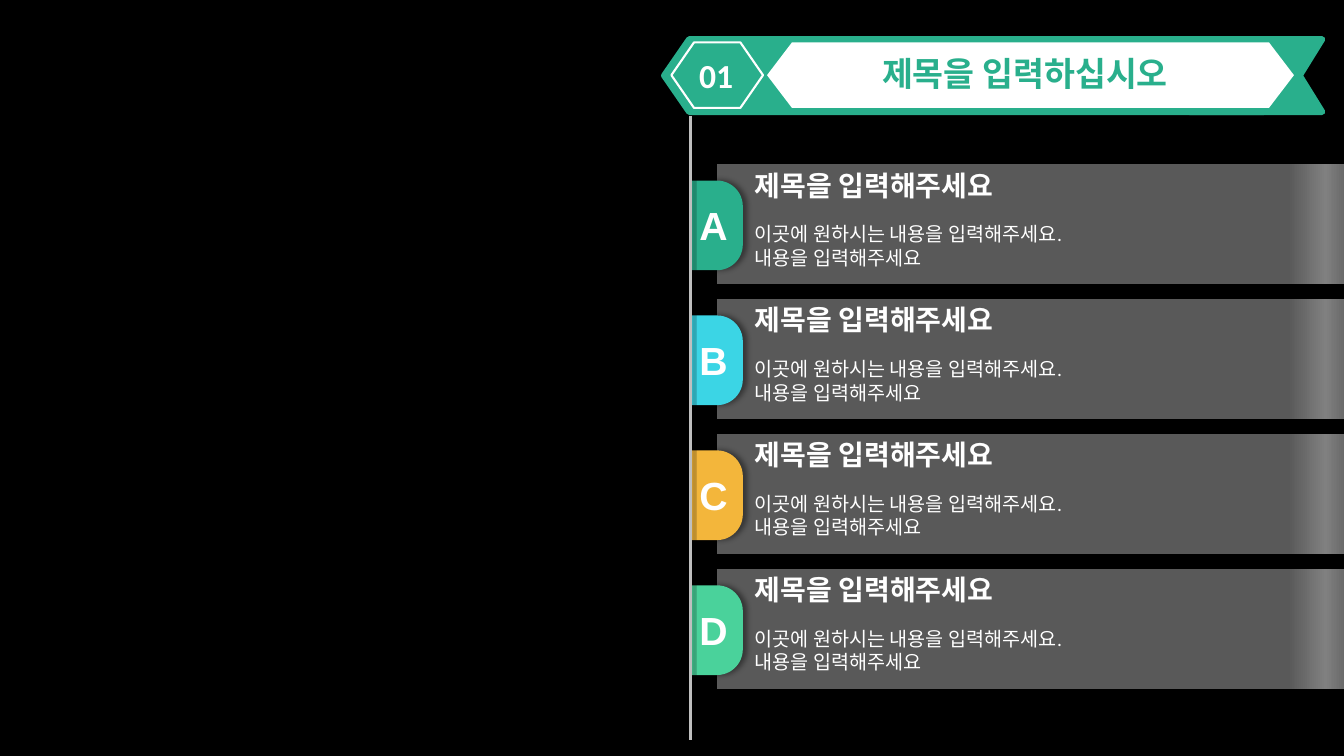
import pptx
import pptx.dml.color
import pptx.enum.shapes
import pptx.enum.text
import pptx.oxml
import pptx.oxml.ns
import pptx.util
from pptx.util import Cm

NUMBER = "01"
TITLE = "제목을 입력하십시오"
HEADING = "제목을 입력해주세요"
BODY = ["이곳에 원하시는 내용을 입력해주세요.", "내용을 입력해주세요"]
ITEMS = [("A", "29AF8C"), ("B", "3BD5E5"), ("C", "F3B63B"), ("D", "4AD29B")]
PANEL_STOPS = [(0, "6A6A6A"), (3, "808080"), (9, "595959")]
GREEN, WHITE, GREY, BLACK = "29AF8C", "FFFFFF", "BFBFBF", "000000"

FIRST_TOP, PITCH = 4.14, 3.4

SHAPE = pptx.enum.shapes.MSO_SHAPE
CENTER = pptx.enum.text.PP_ALIGN.CENTER
NS = pptx.oxml.ns.nsdecls("a")


def rgb(color):
    return pptx.dml.color.RGBColor.from_string(color)


def add_shape(kind, box, fill=None, line=None, width=0, adj=None, flip=False):
    """Place a preset shape; box is left, top, width, height in cm."""
    sp = slide.shapes.add_shape(kind, *map(Cm, box))
    sp.shadow.inherit = False
    if fill:
        sp.fill.solid()
        sp.fill.fore_color.rgb = rgb(fill)
    else:
        sp.fill.background()
    if line:
        sp.line.color.rgb = rgb(line)
        sp.line.width = pptx.util.Pt(width)
    else:
        sp.line.fill.background()
    if adj is not None:
        sp.adjustments[0] = adj
    if flip:
        sp.element.spPr.get_or_add_xfrm().set("flipH", "1")
    return sp


def add_text(lines, box, size, color=WHITE, bold=True, font="Calibri", align=None, wrap=True):
    tf = slide.shapes.add_textbox(*map(Cm, box)).text_frame
    tf.word_wrap = wrap
    tf.auto_size = pptx.enum.text.MSO_AUTO_SIZE.SHAPE_TO_FIT_TEXT
    tf.text = "\n".join(lines)
    for p in tf.paragraphs:
        p.alignment = align
        p.font.size = pptx.util.Pt(size)
        p.font.name = font
        p.font.bold = bold
        p.font.color.rgb = rgb(color)


def set_shadow(sp, blur, dist):
    """Give a 40 % black shadow that falls to the right; sizes in points."""
    spPr = sp._element.spPr
    for old in spPr.findall(pptx.oxml.ns.qn("a:effectLst")):
        spPr.remove(old)
    spPr.append(pptx.oxml.parse_xml(
        f'<a:effectLst {NS}><a:outerShdw blurRad="{blur * 12700}" dist="{dist * 12700}" dir="0">'
        f'<a:srgbClr val="{BLACK}"><a:alpha val="40000"/></a:srgbClr></a:outerShdw></a:effectLst>'))


def set_gradient(sp, stops):
    """Fill from right to left with (percent, colour) stops."""
    sp.fill.gradient()
    sp.fill.gradient_angle = 180
    gs_list = sp._element.spPr.find(".//" + pptx.oxml.ns.qn("a:gsLst"))
    for old in list(gs_list):
        gs_list.remove(old)
    for percent, color in stops:
        gs_list.append(pptx.oxml.parse_xml(
            f'<a:gs {NS} pos="{percent * 1000}"><a:srgbClr val="{color}"/></a:gs>'))


def add_item(letter, color, top):
    panel = add_shape(SHAPE.RECTANGLE, (18.08, top, 15.8, 3.02), GREY)
    set_gradient(panel, PANEL_STOPS)
    add_text([HEADING], (18.77, top - 0.03, 7.09, 1.12), 20, wrap=False)
    add_text(BODY, (18.77, top + 1.33, 12.57, 1.45), 14, bold=False)
    tab = add_shape(SHAPE.ROUND_2_SAME_RECTANGLE, (16.94, top + 0.89, 2.26, 1.3), color, adj=0.5)
    tab.rotation = 90
    set_shadow(tab, 4, 3)
    add_text([letter], (17.37, top + 0.81, 1.22, 1.45), 28, font="Arial", align=CENTER, wrap=False)


def add_banner():
    for kind, left, width, adj in [(SHAPE.PENTAGON, 16.74, 15.11, 0.345),
                                   (SHAPE.CHEVRON, 29.41, 3.91, 0.31)]:
        add_shape(kind, (left, 0.99, width, 1.83), GREEN, GREEN, 4.5, adj, flip=True)
    add_shape(SHAPE.HEXAGON, (19.33, 1.07, 13.28, 1.65), WHITE, adj=0.381)
    add_text([NUMBER], (17.37, 1.27, 1.37, 1.27), 24, wrap=False)
    add_text([TITLE], (19.99, 1.22, 11.68, 1.27), 24, GREEN, align=CENTER)
    add_shape(SHAPE.HEXAGON, (16.92, 1.07, 2.31, 1.65), line=WHITE, width=1.5, adj=0.346)


prs = pptx.Presentation()
prs.slide_width, prs.slide_height = Cm(33.87), Cm(19.05)
slide = prs.slides.add_slide(prs.slide_layouts[6])
slide.background.fill.solid()
slide.background.fill.fore_color.rgb = rgb(BLACK)

for i, (letter, color) in enumerate(ITEMS):
    add_item(letter, color, FIRST_TOP + i * PITCH)

pole = slide.shapes.add_connector(pptx.enum.shapes.MSO_CONNECTOR.STRAIGHT,
                                  Cm(17.4), Cm(2.92), Cm(17.4), Cm(18.64))
pole.line.color.rgb = rgb(GREY)
pole.line.width = pptx.util.Pt(2)
set_shadow(pole, 1, 2)

add_banner()
prs.save("out.pptx")
